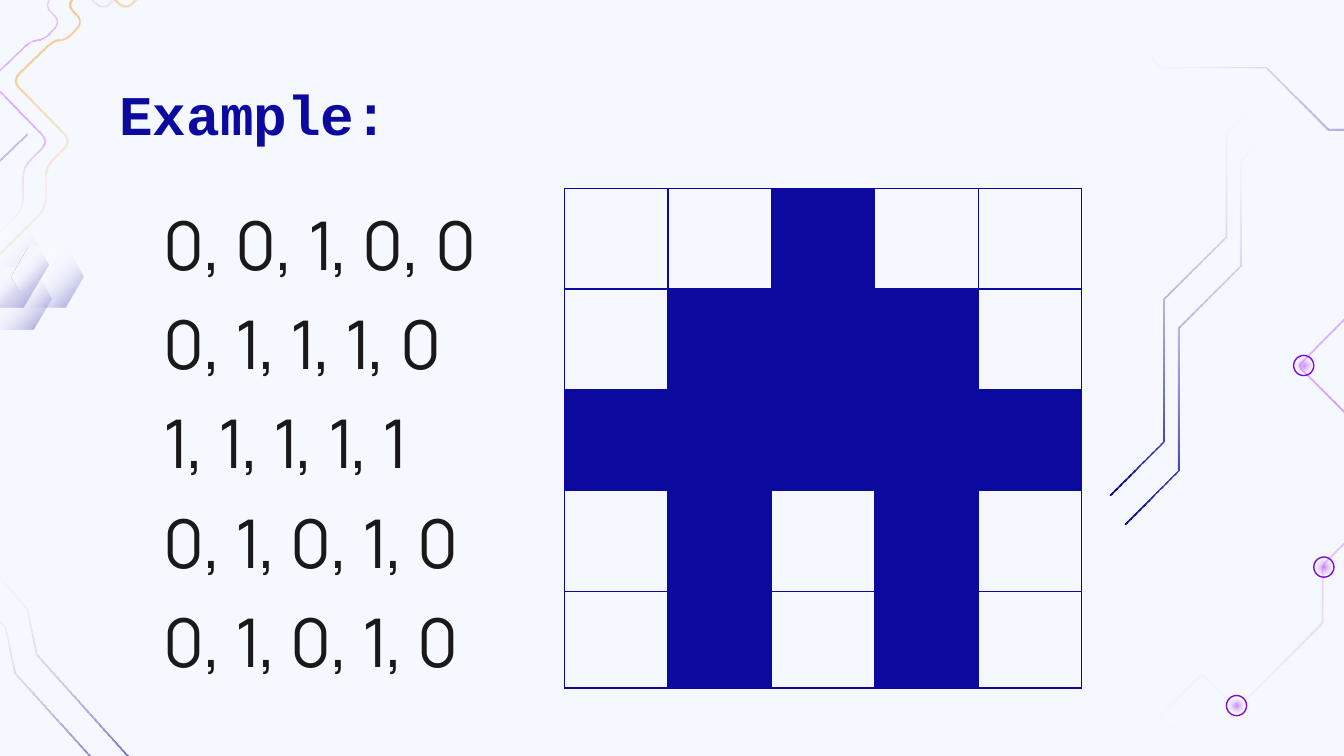
import math
from lxml import etree
from pptx import Presentation
from pptx.dml.color import RGBColor
from pptx.enum.shapes import MSO_SHAPE
from pptx.oxml import parse_xml
from pptx.oxml.ns import nsdecls, qn
from pptx.util import Inches, Pt

ELLIPSE, HEXAGON = MSO_SHAPE.OVAL, MSO_SHAPE.HEXAGON
NAVY, INK, PAPER, VIOLET = "0C0A9E", "191919", "F5F8FF", "8208D5"

# Content
TITLE = "Example:"
BITMAP = [
    [0, 0, 1, 0, 0],
    [0, 1, 1, 1, 0],
    [1, 1, 1, 1, 1],
    [0, 1, 0, 1, 0],
    [0, 1, 0, 1, 0],
]
ROW_HEIGHTS = [0.75, 0.75, 0.75, 0.75, 0.72]
COLUMN_WIDTH = 0.77

# Gradient stops: position, colour, opacity
NAVY_FADE = [(0, NAVY, 100), (100, "FFFFFF", 0)]
PALE_NAVY_FADE = [(0, NAVY, 37), (100, "FFFFFF", 0)]
PURPLE_GLOW = [(0, "9900FF", 47), (100, "FFFFFF", 0)]
GOLD_FADE = [(0, "EB9109", 100), (40, "FF9900", 41), (100, "FFFFFF", 0)]
HEXAGON_FADE = [(0, PAPER, 100), (22, PAPER, 100), (45, "FFFFFF", 0), (100, NAVY, 50)]

# Centre lines of the circuit traces, in inches
RIGHT_TRACE = [(0, 0), (0.4, -0.4), (0.4, -1.46), (0.86, -1.92), (0.86, -2.7),
               (1.11, -2.95), (1.54, -2.95), (1.54, -3.09)]
CORNER_TRACE = [(1.18, 6.25), (1.09, 5.78), (0.27, 4.87), (0.2, 4.53), (-0.15, 4.13)]
LEFT_TRACE = [(0.58, -0.63), (1.1, -0.1), (0.93, 0.08), (0.69, -0.16), (0.49, 0.04),
              (0.62, 0.16), (0.49, 0.3), (0.4, 0.3), (0.09, 0.6), (0.53, 1.05),
              (0.34, 1.24), (0.34, 1.55), (0, 1.89)]
PURPLE_TRACE = [(12.07, 0.3), (11.45, 0.93), (11.79, 1.28), (10.7, 2.37), (10.35, 2.02),
                (9.66, 2.72), (10.49, 3.55), (9.84, 4.2), (9.84, 4.63), (9.2, 5.27),
                (8.94, 5.01), (8.63, 5.32), (8.89, 5.58), (8.77, 5.71), (8.89, 5.84),
                (8.84, 5.9), (8.8, 5.83)]
STUB_TRACE = [(0.2, 0.99), (-0.1, 1.28), (-0.1, 0.71), (-0.32, 0.71), (-0.32, 0.19)]
DOT_CENTRES = [(9.2, 5.25), (9.85, 4.22), (9.7, 2.72)]
HEXAGONS = [(-0.38, 1.65, 0.74, 0.64), (-0.15, 1.99, 0.53, 0.46), (0.09, 1.83, 0.53, 0.46)]


def color(value):
    return RGBColor.from_string(value)


def set_gradient(shape, stops, angle=None):
    """Linear gradient at an angle, or a circular one when no angle is given."""
    stop_xml = "".join(
        f'<a:gs pos="{position * 1000}"><a:srgbClr val="{value}">'
        f'<a:alpha val="{opacity * 1000}"/></a:srgbClr></a:gs>'
        for position, value, opacity in stops)
    if angle is None:
        kind = ('<a:path path="circle"><a:fillToRect l="50000" t="50000" '
                'r="50000" b="50000"/></a:path>')
    else:
        kind = f'<a:lin ang="{round(angle * 60000)}" scaled="0"/>'
    gradient = parse_xml(f'<a:gradFill {nsdecls("a")} rotWithShape="1">'
                         f'<a:gsLst>{stop_xml}</a:gsLst>{kind}</a:gradFill>')
    properties = shape._element.spPr
    geometry = properties.find(qn("a:custGeom"))
    if geometry is None:
        geometry = properties.find(qn("a:prstGeom"))
    geometry.addnext(gradient)
    shape.line.fill.background()
    shape.shadow.inherit = False


def move(points, dx, dy):
    return [(x + dx, y + dy) for x, y in points]


def round_corners(points, cut):
    rounded = [points[0]]
    for before, corner, after in zip(points, points[1:], points[2:]):
        ends = []
        for other in (before, after):
            length = math.dist(corner, other)
            part = min(cut, length / 2) / length
            ends.append([c + (o - c) * part for c, o in zip(corner, other)])
        for step in range(7):
            t = step / 6
            rounded.append(tuple((1 - t) ** 2 * a + 2 * t * (1 - t) * c + t * t * b
                                 for a, c, b in zip(ends[0], corner, ends[1])))
    return rounded + [points[-1]]


def add_trace(slide, points, stops, angle=None, cut=0, width=0.014):
    """Draw a thin ribbon of even width along a centre line."""
    if cut:
        points = round_corners(points, cut)
    steps = [(a, b) for a, b in zip(points, points[1:]) if math.dist(a, b) > 0.0001]
    headings = [math.atan2(b[1] - a[1], b[0] - a[0]) for a, b in steps]
    points = [points[0]] + [b for a, b in steps]
    left, right = [], []
    for index, (x, y) in enumerate(points):
        first = headings[max(index - 1, 0)]
        last = headings[min(index, len(headings) - 1)]
        turn = math.remainder(last - first, math.tau) / 2
        reach = width / 2 / max(math.cos(turn), 0.4)
        dx, dy = -math.sin(first + turn) * reach, math.cos(first + turn) * reach
        left.append((x + dx, y + dy))
        right.append((x - dx, y - dy))
    outline = [(Inches(x), Inches(y)) for x, y in left + right[::-1]]
    builder = slide.shapes.build_freeform(*outline[0])
    builder.add_line_segments(outline[1:], close=True)
    set_gradient(builder.convert_to_shape(), stops, angle)


def add_text(slide, lines, box, size, font, ink, bold=False, gap=0):
    frame = slide.shapes.add_textbox(*map(Inches, box)).text_frame
    frame.word_wrap = True
    frame.margin_left = frame.margin_right = Inches(0.1)
    frame.margin_top = frame.margin_bottom = Inches(0.1)
    for index, line in enumerate(lines):
        paragraph = frame.paragraphs[0] if index == 0 else frame.add_paragraph()
        if index:
            paragraph.space_before = Pt(gap)
        run = paragraph.add_run()
        run.text = line
        run.font.size, run.font.name, run.font.bold = Pt(size), font, bold
        run.font.color.rgb = color(ink)


def set_borders(cell, value, width):
    properties = cell._tc.get_or_add_tcPr()
    for index, side in enumerate(("a:lnL", "a:lnR", "a:lnT", "a:lnB")):
        border = etree.Element(qn(side), w=str(Pt(width)))
        fill = etree.SubElement(border, qn("a:solidFill"))
        etree.SubElement(fill, qn("a:srgbClr"), val=value)
        properties.insert(index, border)


# Widescreen slide, 16:9
presentation = Presentation()
presentation.slide_width, presentation.slide_height = Inches(10), Inches(10 * 9 / 16)
slide = presentation.slides.add_slide(presentation.slide_layouts[6])
slide.background.fill.solid()
slide.background.fill.fore_color.rgb = color(PAPER)

# Traces on the right: two upright, one turned a quarter
for start in ((8.37, 3.9), (8.26, 3.68)):
    add_trace(slide, move(RIGHT_TRACE, *start), NAVY_FADE, 270)
turned = [(y, -x) for x, y in RIGHT_TRACE]
add_trace(slide, move(turned, 11.34, 1.36), NAVY_FADE, 180)
add_trace(slide, PURPLE_TRACE, PURPLE_GLOW, cut=0.03)

# Ringed dots
for x, y in DOT_CENTRES:
    for size in (0.15, 0.11):
        dot = slide.shapes.add_shape(ELLIPSE, Inches(x - size / 2), Inches(y - size / 2),
                                     Inches(size), Inches(size))
        if size == 0.11:
            set_gradient(dot, PURPLE_GLOW)
        else:
            dot.shadow.inherit = False
            dot.fill.background()
            dot.line.color.rgb = color(VIOLET)
            dot.line.width = Pt(0.75)

# Traces and hexagons on the left
for shift in ((0, 0), (-0.16, 0.14)):
    add_trace(slide, move(CORNER_TRACE, *shift), NAVY_FADE, 227.8)
for box in HEXAGONS:
    hexagon = slide.shapes.add_shape(HEXAGON, *map(Inches, box))
    hexagon.adjustments[0] = 0.29
    set_gradient(hexagon, HEXAGON_FADE, 45)
add_trace(slide, LEFT_TRACE, GOLD_FADE, 45, cut=0.08)
add_trace(slide, move(LEFT_TRACE, -0.17, 0), PURPLE_GLOW, cut=0.08)
add_trace(slide, STUB_TRACE, PALE_NAVY_FADE, 225)

# Title and number rows
add_text(slide, [TITLE], (0.79, 0.49, 8.43, 0.63), 30, "Courier New", NAVY, bold=True)
add_text(slide, [", ".join(map(str, row)) for row in BITMAP], (1.12, 1.41, 2.93, 3.77),
         36, "Manrope", INK, gap=10)

# Pixel grid
table = slide.shapes.add_table(
    len(BITMAP), len(BITMAP[0]), Inches(4.2), Inches(1.4),
    Inches(COLUMN_WIDTH * len(BITMAP[0])), Inches(sum(ROW_HEIGHTS))).table
table.first_row = table.horz_banding = False
for column in table.columns:
    column.width = Inches(COLUMN_WIDTH)
for row, height, bits in zip(table.rows, ROW_HEIGHTS, BITMAP):
    row.height = Inches(height)
    for cell, bit in zip(row.cells, bits):
        if bit:
            cell.fill.solid()
            cell.fill.fore_color.rgb = color(NAVY)
        else:
            cell.fill.background()
        set_borders(cell, NAVY, 0.75)

presentation.save("out.pptx")
